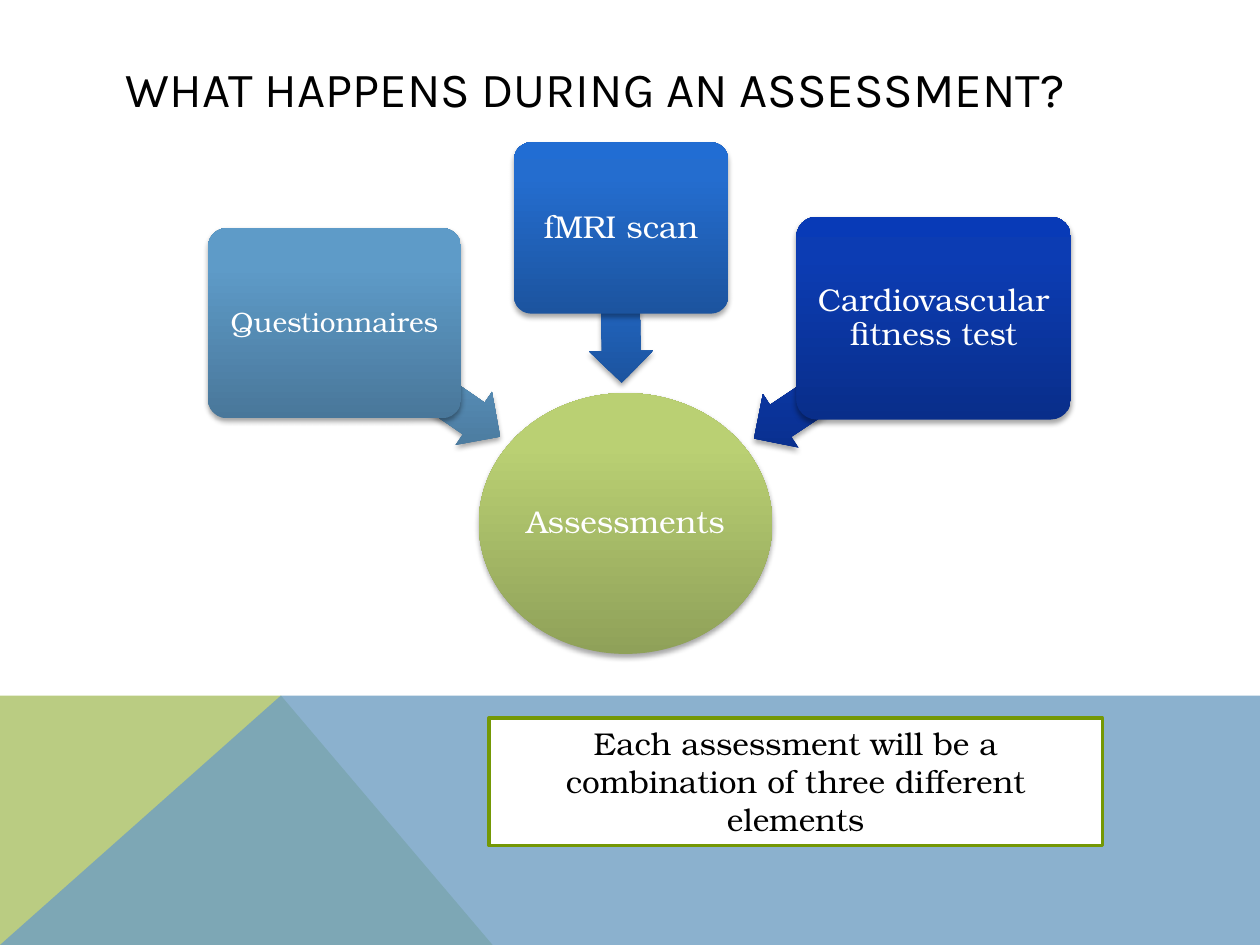
from dataclasses import dataclass

from lxml import etree
from pptx import Presentation
from pptx.dml.color import RGBColor
from pptx.enum.shapes import MSO_SHAPE
from pptx.enum.text import MSO_ANCHOR, PP_ALIGN
from pptx.oxml import parse_xml
from pptx.oxml.ns import nsdecls, qn
from pptx.util import Inches, Pt

ELLIPSE = MSO_SHAPE.OVAL
ROUNDED = MSO_SHAPE.ROUNDED_RECTANGLE
ARROW = MSO_SHAPE.LEFT_ARROW
RECTANGLE = MSO_SHAPE.RECTANGLE
CENTER, LEFT = PP_ALIGN.CENTER, PP_ALIGN.LEFT
MIDDLE, TOP = MSO_ANCHOR.MIDDLE, MSO_ANCHOR.TOP

TITLE_FONT, BODY_FONT = "Karla", "TeX Gyre Bonum"
COLORS = {
    "black": "000000",
    "white": "FFFFFF",
    "band green": "BACC82",
    "band blue": "6E9EC2",
    "note border": "749805",
}
# Gradient colours from the bottom edge to the top edge, at these percentages
STOPS = (0, 80, 100)
GRADIENTS = {
    "green": ("8FA159", "BAD073", "BCD372"),
    "steel": ("49779A", "5E9BC8", "5D9CCB"),
    "blue": ("1C549F", "246DCF", "216DD3"),
    "navy": ("092E8A", "0C3CB3", "083AB7"),
}

Bounds = tuple[float, float, float, float]


@dataclass
class Element:
    label: str
    box: Bounds
    arrow: Bounds
    rotation: float
    gradient: str
    size: int = 18


ELEMENTS = [
    Element("Questionnaires", (1.65, 1.81, 2.01, 1.51),
            (2.52, 2.76, 1.59, 0.51), 214.5, "steel", 16),
    Element("fMRI scan", (4.08, 1.13, 1.7, 1.36),
            (4.31, 2.17, 1.23, 0.51), 269.1, "blue"),
    Element("Cardiovascular fitness test", (6.32, 1.72, 2.18, 1.61),
            (5.84, 2.75, 1.72, 0.51), 326.4, "navy"),
]


def rgb(name: str) -> RGBColor:
    return RGBColor.from_string(COLORS[name])


def write_text(shape, text: str, size: int, color: str, font: str = BODY_FONT,
               align=CENTER, anchor=MIDDLE, spacing: float = 1.0) -> None:
    frame = shape.text_frame
    frame.word_wrap = True
    frame.vertical_anchor = anchor
    frame.text = text
    para = frame.paragraphs[0]
    para.alignment = align
    para.line_spacing = spacing
    span = para.runs[0]
    span.font.name = font
    span.font.size = Pt(size)
    span.font.color.rgb = rgb(color)


def add_band(page, points: list[tuple[float, float]], color: str,
             opacity: int = 100) -> None:
    corners = [(Inches(x), Inches(y)) for x, y in points]
    builder = page.shapes.build_freeform(*corners[0])
    builder.add_line_segments(corners[1:], close=True)
    band = builder.convert_to_shape()
    band.shadow.inherit = False
    band.line.fill.background()
    band.fill.solid()
    band.fill.fore_color.rgb = rgb(color)
    if opacity < 100:
        tint = band.fill._xPr.find(qn("a:solidFill"))[0]
        etree.SubElement(tint, qn("a:alpha"), val=str(opacity * 1000))


def add_glossy_shape(page, kind, bounds: Bounds, gradient: str,
                     adjustments: tuple[float, ...] = ()):
    """Add a shape with an upright gradient and a soft shadow below it."""
    shape = page.shapes.add_shape(kind, *map(Inches, bounds))
    for index, value in enumerate(adjustments):
        shape.adjustments[index] = value
    shape.line.fill.background()
    shape.shadow.inherit = False

    properties = shape._element.spPr
    stops = "".join(
        f'<a:gs pos="{position * 1000}"><a:srgbClr val="{color}"/></a:gs>'
        for position, color in zip(STOPS, GRADIENTS[gradient]))
    fill = parse_xml(
        f'<a:gradFill {nsdecls("a")} rotWithShape="0"><a:gsLst>{stops}</a:gsLst>'
        '<a:lin ang="16200000" scaled="0"/></a:gradFill>')
    properties.find(qn("a:prstGeom")).addnext(fill)
    shadow = parse_xml(
        f'<a:outerShdw {nsdecls("a")} blurRad="{Pt(3.1)}" dist="{Pt(1.8)}" '
        f'dir="5400000" rotWithShape="0"><a:srgbClr val="{COLORS["black"]}">'
        '<a:alpha val="35000"/></a:srgbClr></a:outerShdw>')
    properties.find(qn("a:effectLst")).append(shadow)
    return shape


def add_label(shape, text: str, size: int, inset: float) -> None:
    frame = shape.text_frame
    frame.margin_left = frame.margin_right = Inches(inset)
    frame.margin_top = frame.margin_bottom = Inches(inset)
    write_text(shape, text, size, "white", spacing=0.9)


def add_element(page, element: Element) -> None:
    arrow = add_glossy_shape(page, ARROW, element.arrow, element.gradient, (0.6, 0.5))
    arrow.rotation = element.rotation
    box = add_glossy_shape(page, ROUNDED, element.box, element.gradient, (0.1,))
    add_label(box, element.label, element.size, 0.04)


def add_note(page) -> None:
    note = page.shapes.add_shape(
        RECTANGLE, Inches(3.88), Inches(5.7), Inches(4.87), Inches(1.01))
    note.shadow.inherit = False
    note.fill.solid()
    note.fill.fore_color.rgb = rgb("white")
    note.line.color.rgb = rgb("note border")
    note.line.width = Pt(2)
    write_text(note, "Each assessment will be a combination of three different elements",
               18, "black", anchor=TOP)


def main() -> None:
    deck = Presentation()
    deck.slide_width, deck.slide_height = Inches(10), Inches(7.5)
    page = deck.slides.add_slide(deck.slide_layouts[6])

    add_band(page, [(0, 7.5), (0, 5.52), (2.23, 5.52), (3.91, 7.5)], "band green")
    add_band(page, [(0, 7.5), (2.23, 5.52), (10, 5.52), (10, 7.5)], "band blue", 80)

    title = page.shapes.add_textbox(Inches(0.9), Inches(0.4), Inches(8.22), Inches(0.6))
    write_text(title, "WHAT HAPPENS DURING AN ASSESSMENT?", 28, "black",
               TITLE_FONT, LEFT)

    hub = add_glossy_shape(page, ELLIPSE, (3.8, 3.12, 2.33, 2.07), "green")
    add_label(hub, "Assessments", 18, 0.01)
    for element in ELEMENTS:
        add_element(page, element)
    add_note(page)

    deck.save("out.pptx")


if __name__ == "__main__":
    main()
